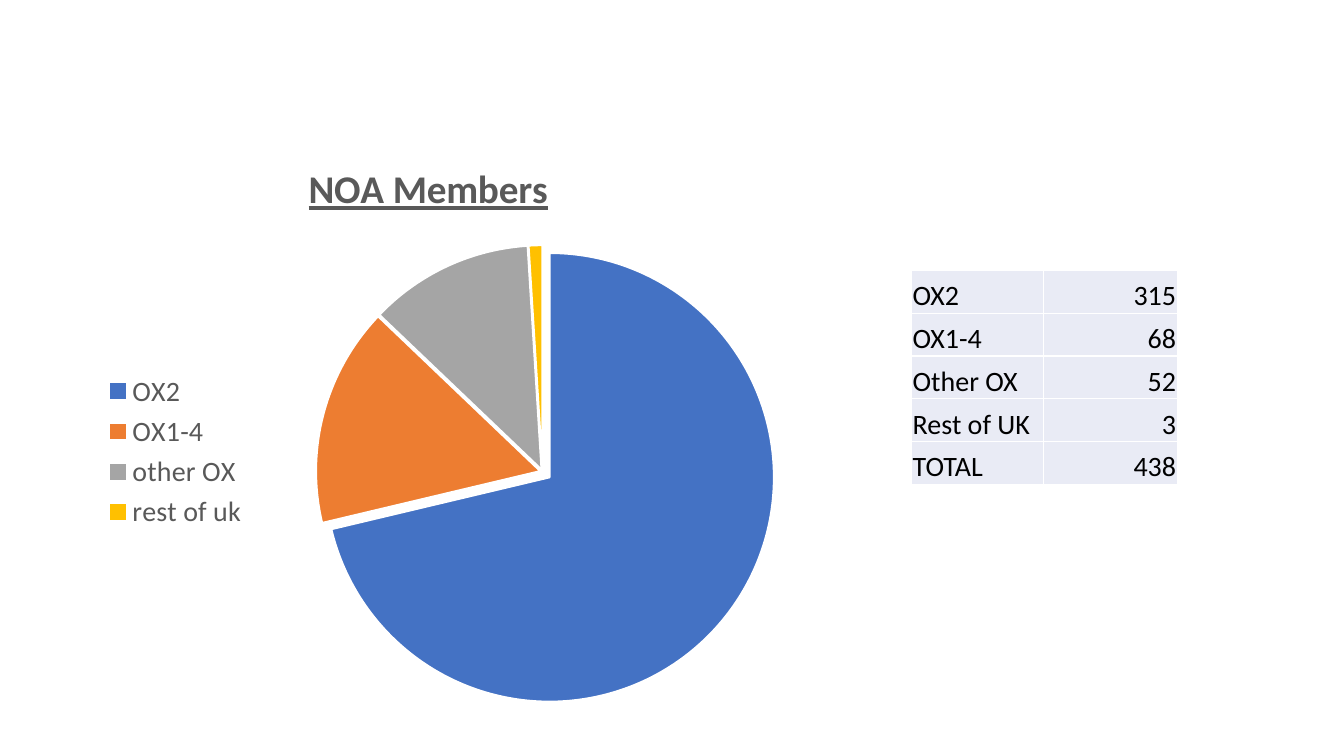
from dataclasses import dataclass

from pptx import Presentation
from pptx import util as u
from pptx.chart import data as cd
from pptx.dml.color import RGBColor
from pptx.enum import chart as ce
from pptx.enum import text as te
from pptx.oxml import parse_xml
from pptx.oxml.ns import nsdecls

FONT = "Calibri"
HUES = {
    "blue": "4472C4",
    "orange": "ED7D31",
    "grey": "A5A5A5",
    "gold": "FFC000",
    "text": "595959",
    "ink": "000000",
    "cell": "E9EBF5",
    "white": "FFFFFF",
}


@dataclass
class Slice:
    label: str
    share: int
    hue: str
    burst: int


@dataclass
class Row:
    label: str
    count: str


@dataclass
class Place:
    tag: str
    index: int
    sides: dict[str, float]


SLICES = [
    Slice("OX2", 72, "blue", 4),
    Slice("OX1-4 ", 16, "orange", 1),
    Slice("other OX", 12, "grey", 1),
    Slice("rest of uk", 1, "gold", 1),
]
ROWS = [
    Row("OX2", "315"),
    Row("OX1-4", "68"),
    Row("Other OX", "52"),
    Row("Rest of UK", "3"),
    Row("TOTAL", "438"),
]
PLACES = [
    Place("title", 1, {"x": 0.29, "y": 0.03}),
    Place("plotArea", 0, {"x": 0.31, "y": 0.19, "w": 0.61, "h": 0.78}),
    Place("legend", 1, {"x": 0.02, "y": 0.4, "w": 0.2, "h": 0.29}),
]


def tint(hue: str) -> RGBColor:
    return RGBColor.from_string(HUES[hue])


def style(font, size: int, hue: str) -> None:
    font.name = FONT
    font.size = u.Pt(size)
    font.color.rgb = tint(hue)


def lay(chart, place: Place) -> None:
    node = chart.element.xpath(f"//c:{place.tag}")[0]
    for old in node.xpath("./c:layout"):
        node.remove(old)
    modes = "".join(f'<c:{s}Mode val="edge"/>' for s in ("x", "y"))
    if place.tag == "plotArea":
        modes = '<c:layoutTarget val="inner"/>' + modes
    sizes = "".join(f'<c:{s} val="{v}"/>' for s, v in place.sides.items())
    node.insert(place.index, parse_xml(
        f'<c:layout {nsdecls("c")}><c:manualLayout>{modes}{sizes}'
        "</c:manualLayout></c:layout>"))


def draw_pie(slide) -> None:
    data = cd.CategoryChartData()
    data.categories = [s.label for s in SLICES]
    data.add_series("Series 1", [s.share for s in SLICES])
    chart = slide.shapes.add_chart(
        ce.XL_CHART_TYPE.PIE, u.Cm(2.18), u.Cm(3.48),
        u.Cm(18.69), u.Cm(14.5), data).chart
    style(chart.font, 10, "ink")

    chart.has_title = True
    run = chart.chart_title.text_frame.paragraphs[0].add_run()
    run.text = "NOA Members"
    style(run.font, 28, "text")
    run.font.bold = True
    run.font.underline = True

    chart.has_legend = True
    chart.legend.position = ce.XL_LEGEND_POSITION.LEFT
    chart.legend.include_in_layout = False
    style(chart.legend.font, 20, "text")

    plot = chart.plots[0]
    plot.vary_by_categories = True
    for i, part in enumerate(SLICES):
        look = plot.series[0].points[i].format
        look.fill.solid()
        look.fill.fore_color.rgb = tint(part.hue)
        look.line.color.rgb = tint("white")
        look.line.width = u.Pt(1.5)
    for node, part in zip(chart.element.xpath("//c:dPt"), SLICES):
        node.insert(1, parse_xml(
            f'<c:explosion {nsdecls("c")} val="{part.burst}"/>'))
    for place in PLACES:
        lay(chart, place)


def fill_cell(cell, words: str, align) -> None:
    cell.margin_left = cell.margin_right = cell.margin_top = u.Cm(0.03)
    cell.margin_bottom = 0
    cell.vertical_anchor = te.MSO_ANCHOR.BOTTOM
    cell.fill.solid()
    cell.fill.fore_color.rgb = tint("cell")
    para = cell.text_frame.paragraphs[0]
    para.alignment = align
    run = para.add_run()
    run.text = words
    style(run.font, 20, "ink")
    props = cell._tc.get_or_add_tcPr()
    for i, side in enumerate(("lnL", "lnR", "lnT", "lnB")):
        props.insert(i, parse_xml(
            f'<a:{side} {nsdecls("a")} w="12700"><a:solidFill>'
            f'<a:srgbClr val="{HUES["white"]}"/></a:solidFill></a:{side}>'))


def draw_table(slide) -> None:
    table = slide.shapes.add_table(
        len(ROWS), 2, u.Cm(22.97), u.Cm(6.81), u.Cm(6.7), u.Cm(5.4)).table
    table.first_row = False
    table.horz_banding = False
    for col, width in zip(table.columns, (3.32, 3.38)):
        col.width = u.Cm(width)
    for i, row in enumerate(ROWS):
        table.rows[i].height = u.Cm(1.08)
        fill_cell(table.cell(i, 0), row.label, te.PP_ALIGN.LEFT)
        fill_cell(table.cell(i, 1), row.count, te.PP_ALIGN.RIGHT)


def main() -> None:
    deck = Presentation()
    deck.slide_width = u.Cm(33.87)
    deck.slide_height = u.Cm(19.05)
    slide = deck.slides.add_slide(deck.slide_layouts[6])
    draw_pie(slide)
    draw_table(slide)
    deck.save("out.pptx")


if __name__ == "__main__":
    main()
